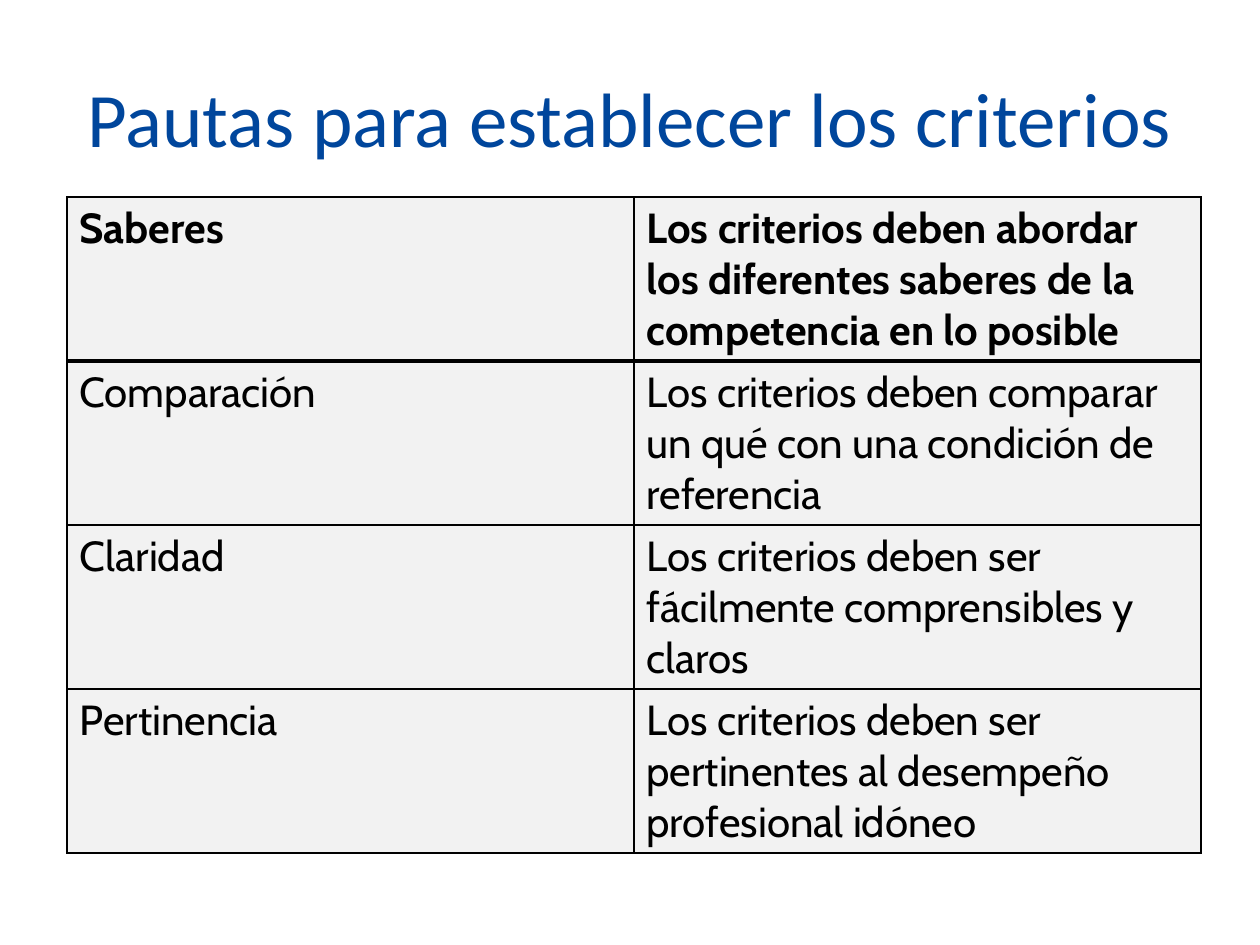
from lxml.etree import SubElement as Sub
from pptx import Presentation as Deck
from pptx.dml.color import RGBColor as Rgb
from pptx.enum.text import MSO_ANCHOR as Anchor, PP_ALIGN as Align
from pptx.oxml.ns import qn
from pptx.util import Emu, Pt

PX = 914400 / 126
HUES = {"title": "00469C", "text": "000000", "edge": "000000", "cell": "F2F2F2"}
TITLE = "Pautas para establecer los criterios"
ROWS = [
    ("Saberes", "Los criterios deben abordar los diferentes saberes de la competencia en lo posible"),
    ("Comparación", "Los criterios deben comparar un qué con una condición de referencia"),
    ("Claridad", "Los criterios deben ser fácilmente comprensibles y claros"),
    ("Pertinencia", "Los criterios deben ser pertinentes al desempeño profesional idóneo"),
]


def px(n):
    return Emu(round(n * PX))


def hue(name):
    return Rgb.from_string(HUES[name])


def style(frame, face, size, tone, bold=False):
    for para in frame.paragraphs:
        for run in para.runs:
            font = run.font
            font.name, font.size, font.bold = face, Pt(size), bold
            font.color.rgb = hue(tone)


def add_title(slide, text):
    box = slide.shapes.add_textbox(px(63), px(38), px(1134), px(158))
    frame = box.text_frame
    frame.word_wrap = True
    frame.vertical_anchor = Anchor.MIDDLE
    frame.text = text
    frame.paragraphs[0].alignment = Align.CENTER
    style(frame, "Calibri", 44, "title")


def add_edge(props, side, width):
    line = Sub(props, qn(f"a:ln{side}"), w=str(Pt(width)))
    fill = Sub(line, qn("a:solidFill"))
    Sub(fill, qn("a:srgbClr"), val=HUES["edge"])


def fill_cell(cell, text, row):
    cell.text_frame.text = text
    style(cell.text_frame, "Cabin", 24, "text", row == 0)
    props = cell._tc.get_or_add_tcPr()
    widths = {"L": 1, "R": 1, "T": 3 if row == 1 else 1, "B": 3 if row == 0 else 1}
    for side, width in widths.items():
        add_edge(props, side, width)
    cell.fill.solid()
    cell.fill.fore_color.rgb = hue("cell")


def add_grid(slide, rows):
    frame = slide.shapes.add_table(len(rows), 2, px(67), px(197), px(1134), px(164 * len(rows)))
    grid = frame.table
    grid.horz_banding = False
    for r, texts in enumerate(rows):
        for c, text in enumerate(texts):
            fill_cell(grid.cell(r, c), text, r)


def main():
    deck = Deck()
    deck.slide_width, deck.slide_height = px(1260), px(945)
    slide = deck.slides.add_slide(deck.slide_layouts[6])
    add_title(slide, TITLE)
    add_grid(slide, ROWS)
    deck.save("out.pptx")


if __name__ == "__main__":
    main()
